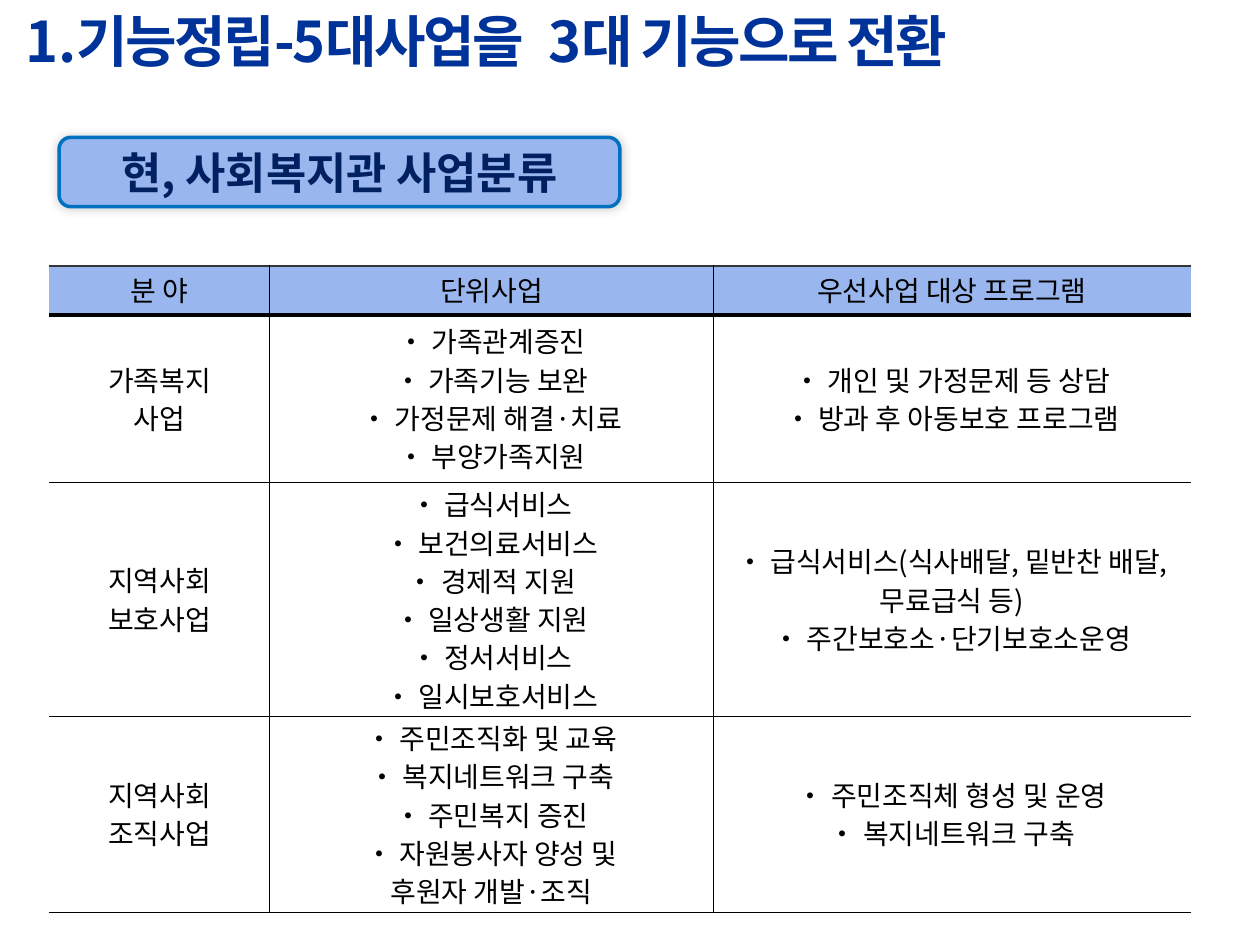
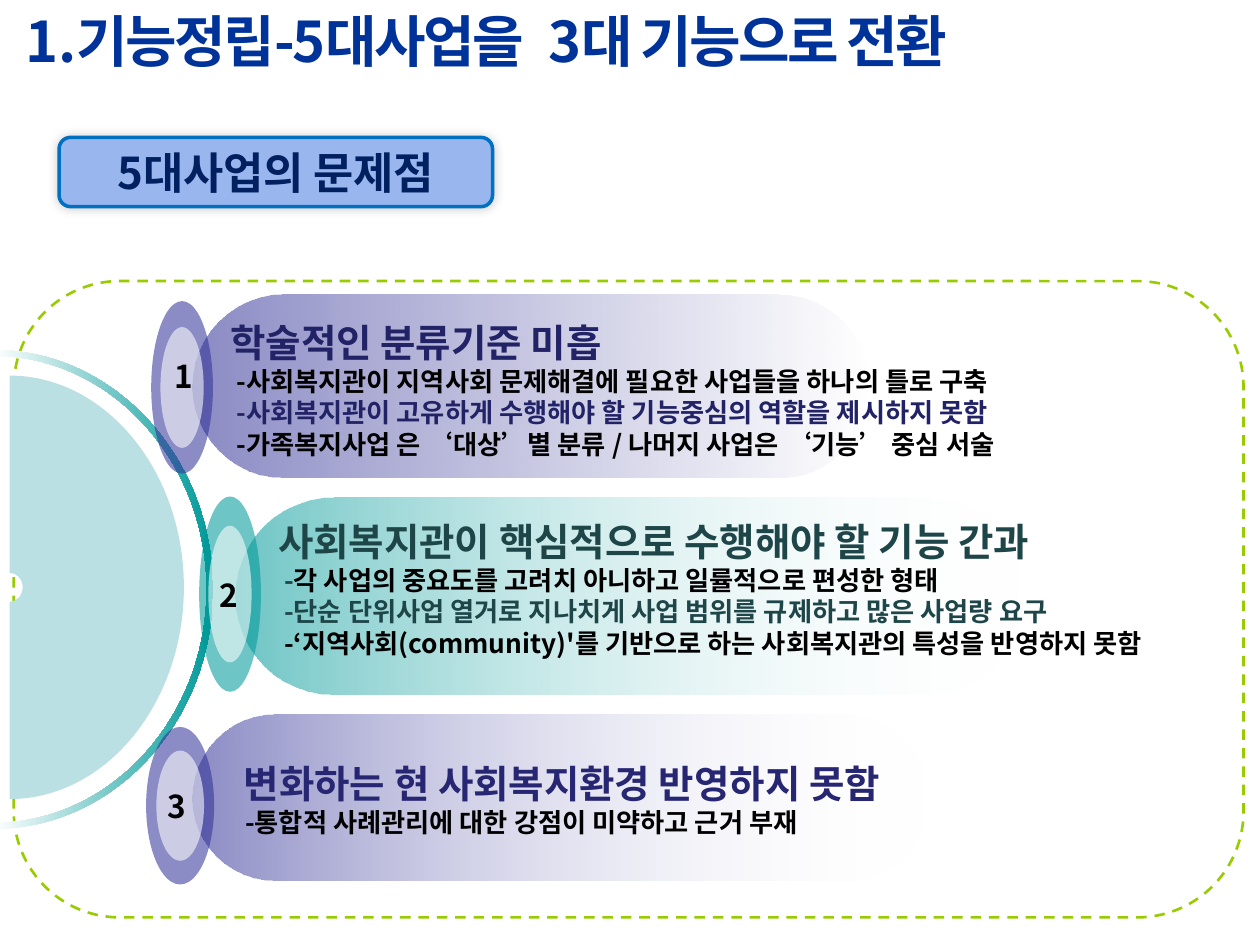
from dataclasses import dataclass

from lxml.etree import SubElement
from pptx import Presentation
from pptx.dml.color import RGBColor
from pptx.enum.dml import MSO_LINE
from pptx.enum.shapes import MSO_SHAPE
from pptx.enum.text import MSO_ANCHOR, PP_ALIGN
from pptx.oxml.ns import qn
from pptx.util import Pt


@dataclass(frozen=True)
class Theme:
    font: str = "Noto Sans CJK KR"
    title: str = "003399"
    label_text: str = "002060"
    label_line: str = "0070C0"
    band: str = "99B6EF"
    frame: str = "99CC00"
    black: str = "000000"
    white: str = "FFFFFF"
    table_top: str = "353535"
    indigo: str = "333399"
    indigo_fade: str = "48489E"
    indigo_text: str = "222267"
    indigo_head: str = "262673"
    teal: str = "009999"
    teal_text: str = "1E4649"
    disk: str = "BBE0E3"
    title_size: int = 32
    label_size: int = 25
    head_size: int = 22
    number_size: int = 18
    cell_size: int = 16
    line_size: int = 15
    opacity: int = 57


T = Theme()
NO_STYLE = "{2D5ABB26-0587-4C30-8999-92F81FD0307C}"
ARC = 0.55  # Bezier handle length of a quarter ellipse

TITLE = [("1.", 0), ("기능정립-5대사업을", -1.5), (" ", 6.5), ("3대 기능으로 전환", -1.5)]
LABELS = [("현, 사회복지관 사업분류", 320.4), ("5대사업의 문제점", 247.7)]

COLUMNS = [126, 253.4, 272.9]
ROW_HEIGHTS = [28.1, 95.8, 133.7, 111.6]
ROWS = [
    (["분 야"], ["단위사업"], ["우선사업 대상 프로그램"]),
    (["가족복지", "사업"],
     ["• 가족관계증진", "• 가족기능 보완", "• 가정문제 해결·치료", "• 부양가족지원"],
     ["• 개인 및 가정문제 등 상담", "• 방과 후 아동보호 프로그램"]),
    (["지역사회", "보호사업"],
     ["• 급식서비스", "• 보건의료서비스", "• 경제적 지원", "• 일상생활 지원",
      "• 정서서비스", "• 일시보호서비스"],
     ["• 급식서비스(식사배달, 밑반찬 배달, 무료급식 등)", "• 주간보호소·단기보호소운영"]),
    (["지역사회", "조직사업"],
     ["• 주민조직화 및 교육", "• 복지네트워크 구축", "• 주민복지 증진",
      "• 자원봉사자 양성 및", "후원자 개발·조직"],
     ["• 주민조직체 형성 및 운영", "• 복지네트워크 구축"]),
]

PROBLEMS = [
    dict(head="학술적인 분류기준 미흡", head_color=T.indigo_text, head_indent=0,
         color=T.indigo, fade=T.indigo_fade,
         bar=(110.2, 168.5, 386.6, 104.4), ring=(86.4, 172.1, 35.3, 98.6),
         number=(104.8, 215), text=(124.6, 178.6, 559.4, 88.6),
         lines=[
             [("-사회복지관이 지역사회 문제해결에 필요한 사업들을 하나의 틀로 구축", T.black)],
             [("-사회복지관이 고유하게 수행해야 할 기능중심의 역할을 제시하지 못함", T.indigo_text)],
             [("-가족복지사업 은 ‘대상’별 분류 / 나머지 사업은 ‘기능’ 중심 서술", T.black)]]),
    dict(head="사회복지관이 핵심적으로 수행해야 할 기능 간과", head_color=T.teal_text, head_indent=0,
         color=T.teal, fade=T.white,
         bar=(134.6, 284.4, 450, 112.3), ring=(113.8, 283.7, 35.3, 111.6),
         number=(131, 340), text=(151.9, 292.3, 568, 106),
         lines=[
             [("-", T.teal_text), ("각 사업의 중요도를 고려치 아니하고 일률적으로 편성한 형태", T.black)],
             [("-단순 단위사업 열거로 지나치게 사업 범위를 규제하고 많은 사업량 요구", T.teal_text)],
             [("-‘지역사회(community)'를 기반으로 하는 사회복지관의 특성을 반영하지 못함", T.black)]]),
    dict(head="변화하는 현 사회복지환경 반영하지 못함", head_color=T.indigo_head, head_indent=2.7,
         color=T.indigo, fade=T.white,
         bar=(110.2, 408.2, 420.5, 95), ring=(83.5, 415.4, 38.9, 90),
         number=(101.2, 460.8), text=(129.6, 430.6, 491, 51.8),
         lines=[[("-통합적 사례관리에 대한 강점이 미약하고 근거 부재", T.black)]]),
]


def rgb(color):
    return RGBColor.from_string(color)


def set_all(target, **values):
    for name, value in values.items():
        setattr(target, name, value)


def add_run(p, text, size, color, bold=True, spacing=0):
    r = p.add_run()
    r.text = text
    set_all(r.font, name=T.font, size=Pt(size), bold=bold)
    r.font.color.rgb = rgb(color)
    if spacing:
        r.font._element.set("spc", str(int(spacing * 100)))


def set_indent(p, left):
    p._p.get_or_add_pPr().set("marL", str(Pt(left)))


def paint(s, *stops):
    """Fill with one (color, opacity) stop, or a left-to-right gradient of two."""
    if len(stops) == 1:
        s.fill.solid()
        s.fill.fore_color.rgb = rgb(stops[0][0])
    else:
        s.fill.gradient()
        s.fill.gradient_angle = 0
        for position, (stop, (color, _)) in enumerate(zip(s.fill.gradient_stops, stops)):
            stop.position = position
            stop.color.rgb = rgb(color)
    colors = list(s._element.spPr.iter(qn("a:srgbClr")))
    for element, (_, opacity) in zip(colors, stops):
        if opacity < 100:
            SubElement(element, qn("a:alpha")).set("val", str(opacity * 1000))
    s.line.fill.background()
    s.shadow.inherit = False


def add_shape(slide, kind, box, *stops):
    s = slide.shapes.add_shape(kind, *map(Pt, box))
    if stops:
        paint(s, *stops)
    else:
        s.fill.background()
        s.shadow.inherit = False
    return s


def add_text_box(slide, box, wrap=True):
    tf = slide.shapes.add_textbox(*map(Pt, box)).text_frame
    tf.word_wrap = wrap
    return tf


def outline(s, color, width):
    s.line.color.rgb = rgb(color)
    s.line.width = Pt(width)


def add_base(prs, label, width):
    """Add a slide with the shared title and the label band."""
    slide = prs.slides.add_slide(prs.slide_layouts[6])
    s = add_shape(slide, MSO_SHAPE.ROUNDED_RECTANGLE, (33.8, 78.5, width, 39.6), (T.band, 100))
    outline(s, T.label_line, 2)
    shadow = SubElement(s._element.spPr.find(qn("a:effectLst")), qn("a:outerShdw"),
                        blurRad=str(Pt(6)), dist="0", dir="18900000")
    color = SubElement(shadow, qn("a:srgbClr"), val=T.black)
    SubElement(color, qn("a:alpha"), val="20000")
    s.text_frame.vertical_anchor = MSO_ANCHOR.MIDDLE
    p = s.text_frame.paragraphs[0]
    p.alignment = PP_ALIGN.CENTER
    add_run(p, label, T.label_size, T.label_text)

    p = add_text_box(slide, (0, 0, 683.3, 46.1)).paragraphs[0]
    set_indent(p, 7.2)
    for text, spacing in TITLE:
        add_run(p, text, T.title_size, T.title, spacing=spacing)
    return slide


def set_borders(cell, row, col):
    thin = (T.black, 0.28)
    rule = (T.black, 1.98)
    edges = {
        "L": thin if col else None,
        "R": thin if col < len(COLUMNS) - 1 else None,
        "T": {0: (T.table_top, 1.41), 1: rule}.get(row, thin),
        "B": thin if row else rule,
    }
    props = cell._tc.get_or_add_tcPr()
    for i, (side, edge) in enumerate(edges.items()):
        ln = SubElement(props, qn(f"a:ln{side}"))
        props.insert(i, ln)
        if edge:
            color, width = edge
            ln.set("w", str(Pt(width)))
            SubElement(SubElement(ln, qn("a:solidFill")), qn("a:srgbClr"), val=color)
        else:
            SubElement(ln, qn("a:noFill"))


def fill_cell(cell, texts):
    set_all(cell, vertical_anchor=MSO_ANCHOR.MIDDLE, margin_left=Pt(4.3),
            margin_right=Pt(4.3), margin_top=Pt(1.4), margin_bottom=Pt(1.4))
    tf = cell.text_frame
    for i, text in enumerate(texts):
        p = tf.add_paragraph() if i else tf.paragraphs[0]
        set_all(p, alignment=PP_ALIGN.CENTER, line_spacing=0.95)
        add_run(p, text, T.cell_size, T.black, bold=False)


def add_business_table(slide):
    box = (28.1, 151.9, sum(COLUMNS), sum(ROW_HEIGHTS))
    table = slide.shapes.add_table(len(ROWS), len(COLUMNS), *map(Pt, box)).table
    set_all(table, first_row=False, horz_banding=False)
    table._tbl.tblPr.find(qn("a:tableStyleId")).text = NO_STYLE
    for column, width in zip(table.columns, COLUMNS):
        column.width = Pt(width)
    for r, (texts, height) in enumerate(zip(ROWS, ROW_HEIGHTS)):
        table.rows[r].height = Pt(height)
        for c, lines in enumerate(texts):
            cell = table.cell(r, c)
            fill_cell(cell, lines)
            if r:
                cell.fill.background()
            else:
                cell.fill.solid()
                cell.fill.fore_color.rgb = rgb(T.band)
            set_borders(cell, r, c)


def bend(segment, start, end):
    """Turn a line segment into a quarter of an ellipse that bulges to the right."""
    corner = (max(start[0], end[0]), min(start, end)[1])
    handles = [tuple(round(a + ARC * (b - a)) for a, b in zip(point, corner))
               for point in (start, end)]
    segment.tag = qn("a:cubicBezTo")
    segment.remove(segment[0])
    for x, y in (*handles, end):
        SubElement(segment, qn("a:pt"), x=str(x), y=str(y))


def add_half_ring(slide, center, outer, inner, *stops):
    """Draw the right half of an elliptical ring; outer and inner are radii pairs."""
    cx, cy = center
    points = [(Pt(cx + rx * dx), Pt(cy + ry * dy))
              for (rx, ry), sign in ((outer, 1), (inner, -1))
              for dx, dy in ((0, -sign), (1, 0), (0, sign))]
    builder = slide.shapes.build_freeform(*points[0])
    builder.add_line_segments(points[1:])
    s = builder.convert_to_shape()
    local = [(x - s.left, y - s.top) for x, y in points]
    segments = list(s._element.spPr.iter(qn("a:lnTo")))
    for i in (0, 1, 3, 4):
        bend(segments[i], local[i], local[i + 1])
    paint(s, *stops)


def add_problem(slide, number, item):
    add_shape(slide, MSO_SHAPE.ROUNDED_RECTANGLE, item["bar"],
              (item["color"], T.opacity), (item["fade"], 0)).adjustments[0] = 0.5
    x, y, w, h = item["ring"]
    core = (x + 0.15 * w, y + 0.15 * h, 0.7 * w, 0.7 * h)
    add_shape(slide, MSO_SHAPE.OVAL, item["ring"], (item["color"], T.opacity))
    add_shape(slide, MSO_SHAPE.OVAL, core, (T.white, T.opacity))

    cx, cy = item["number"]
    tf = add_text_box(slide, (cx - 13, cy - 15, 26, 30), wrap=False)
    tf.vertical_anchor = MSO_ANCHOR.MIDDLE
    p = tf.paragraphs[0]
    p.alignment = PP_ALIGN.CENTER
    add_run(p, str(number), T.number_size, T.black)

    tf = add_text_box(slide, item["text"])
    p = tf.paragraphs[0]
    set_indent(p, item["head_indent"])
    add_run(p, item["head"], T.head_size, item["head_color"])
    for line in item["lines"]:
        p = tf.add_paragraph()
        set_indent(p, 3.4)
        for text, color in line:
            add_run(p, text, T.line_size, color)


def add_problems(slide):
    frame = add_shape(slide, MSO_SHAPE.ROUNDED_RECTANGLE, (7.9, 160.6, 702.7, 363.6))
    outline(frame, T.frame, 1.5)
    frame.line.dash_style = MSO_LINE.DASH
    add_half_ring(slide, (-3.6, 336.8), (125.3, 136.8), (121.7, 133.4),
                  (T.white, 100), (T.teal, 100))
    add_half_ring(slide, (5.5, 335.6), (99.6, 121), (7.5, 8.3), (T.disk, 100))
    for number, item in enumerate(PROBLEMS, 1):
        add_problem(slide, number, item)


def main():
    prs = Presentation()
    set_all(prs, slide_width=Pt(720), slide_height=Pt(540))
    for label, add_body in zip(LABELS, (add_business_table, add_problems)):
        add_body(add_base(prs, *label))
    prs.save("out.pptx")


if __name__ == "__main__":
    main()
